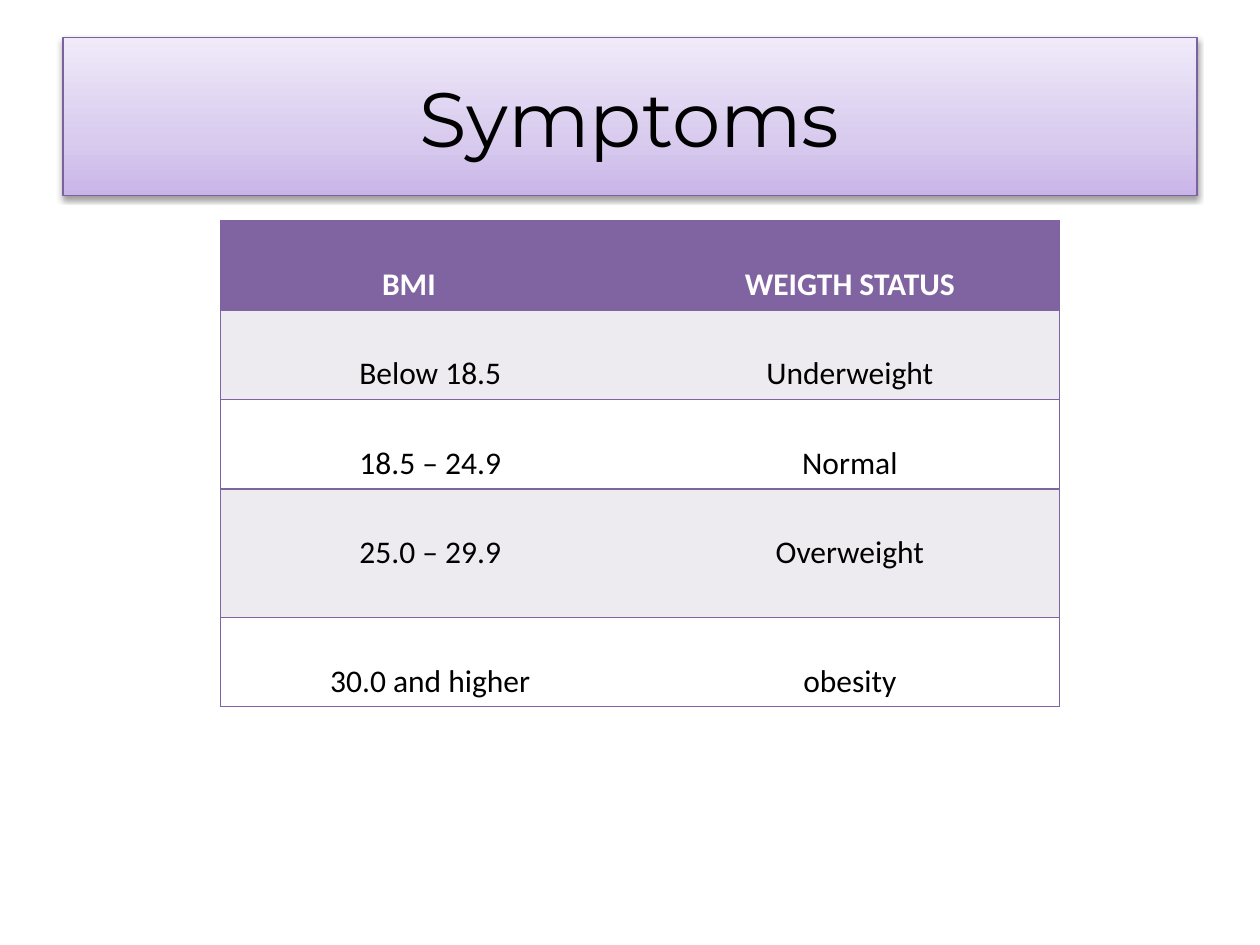
"""Build the Symptoms slide with its table of BMI ranges and weight status."""
from copy import deepcopy

from lxml import etree
from pptx import Presentation
from pptx.dml.color import RGBColor
from pptx.enum.text import MSO_ANCHOR, PP_ALIGN
from pptx.oxml.ns import qn
from pptx.util import Inches, Pt

CENTER = PP_ALIGN.CENTER
MIDDLE, BOTTOM = MSO_ANCHOR.MIDDLE, MSO_ANCHOR.BOTTOM

TITLE = "Symptoms"
ROWS = [
    ("BMI", "WEIGTH STATUS"),
    ("Below 18.5", "Underweight"),
    ("18.5 – 24.9", "Normal"),
    ("25.0 – 29.9", "Overweight"),
    ("30.0 and higher", "obesity"),
]
TALL_ROW = 3
ROW_HEIGHT, TALL_HEIGHT, COLUMN_WIDTH = 0.71, 1.02, 3.33
PURPLE, BAND, WHITE, BLACK = "8064A2", "EDEAF0", "FFFFFF", "000000"
TITLE_GRADIENT = [(0, "C9B5E8"), (0.35, "D8CBEE"), (1, "F0EAF9")]


def rgb(value):
    return RGBColor.from_string(value)


def style_font(paragraph, name, size, color, bold=False):
    paragraph.alignment = CENTER
    font = paragraph.font
    font.name, font.size, font.bold = name, Pt(size), bold
    font.color.rgb = rgb(color)


def add_color(parent, value):
    return etree.SubElement(parent, qn("a:srgbClr"), val=value)


def add_borders(cell, sides):
    properties = cell._tc.get_or_add_tcPr()
    for position, side in enumerate("LRTB"):
        line = etree.Element(qn(f"a:ln{side}"), w=str(Pt(1)))
        if side in sides:
            add_color(etree.SubElement(line, qn("a:solidFill")), PURPLE)
        else:
            etree.SubElement(line, qn("a:noFill"))
        properties.insert(position, line)


def add_title(slide):
    title = slide.shapes.title
    title.left, title.top = Inches(0.5), Inches(0.3)
    title.width, title.height = Inches(9), Inches(1.25)
    title.text_frame.text = TITLE
    title.text_frame.vertical_anchor = MIDDLE
    style_font(title.text_frame.paragraphs[0], "Montserrat", 44, BLACK)

    title.fill.gradient()
    title.fill.gradient_angle = 90
    properties = title._element.spPr
    stop_list = properties.find(".//" + qn("a:gsLst"))
    stop_list.append(deepcopy(stop_list[-1]))
    for stop, (position, color) in zip(title.fill.gradient_stops, TITLE_GRADIENT):
        stop.position = position
        stop.color.rgb = rgb(color)
    title.line.color.rgb = rgb("7D60A0")
    title.line.width = Pt(0.75)

    effects = etree.SubElement(properties, qn("a:effectLst"))
    shadow = etree.SubElement(
        effects, qn("a:outerShdw"), blurRad=str(Pt(3.1)), dist=str(Pt(1.6)),
        dir="5400000", rotWithShape="0")
    etree.SubElement(add_color(shadow, BLACK), qn("a:alpha"), val="38000")


def add_bmi_table(slide):
    heights = [TALL_HEIGHT if i == TALL_ROW else ROW_HEIGHT for i in range(len(ROWS))]
    table = slide.shapes.add_table(
        len(ROWS), 2, Inches(1.75), Inches(1.75),
        Inches(2 * COLUMN_WIDTH), Inches(sum(heights))).table
    for column in table.columns:
        column.width = Inches(COLUMN_WIDTH)
    for i, (labels, height) in enumerate(zip(ROWS, heights)):
        table.rows[i].height = Inches(height)
        header = i == 0
        fill = PURPLE if header else BAND if i % 2 else WHITE
        for j, label in enumerate(labels):
            cell = table.cell(i, j)
            cell.text = label
            cell.vertical_anchor = MIDDLE if i == TALL_ROW else BOTTOM
            cell.fill.solid()
            cell.fill.fore_color.rgb = rgb(fill)
            style_font(cell.text_frame.paragraphs[0], "Calibri", 18,
                       WHITE if header else BLACK, header)
            add_borders(cell, "RTB" if j else "LTB")
    table.cell(0, 0).margin_right = Inches(0.44)


def main():
    presentation = Presentation()
    presentation.slide_width, presentation.slide_height = Inches(10), Inches(7.5)
    slide = presentation.slides.add_slide(presentation.slide_layouts[5])
    add_bmi_table(slide)
    add_title(slide)
    presentation.save("out.pptx")


if __name__ == "__main__":
    main()
